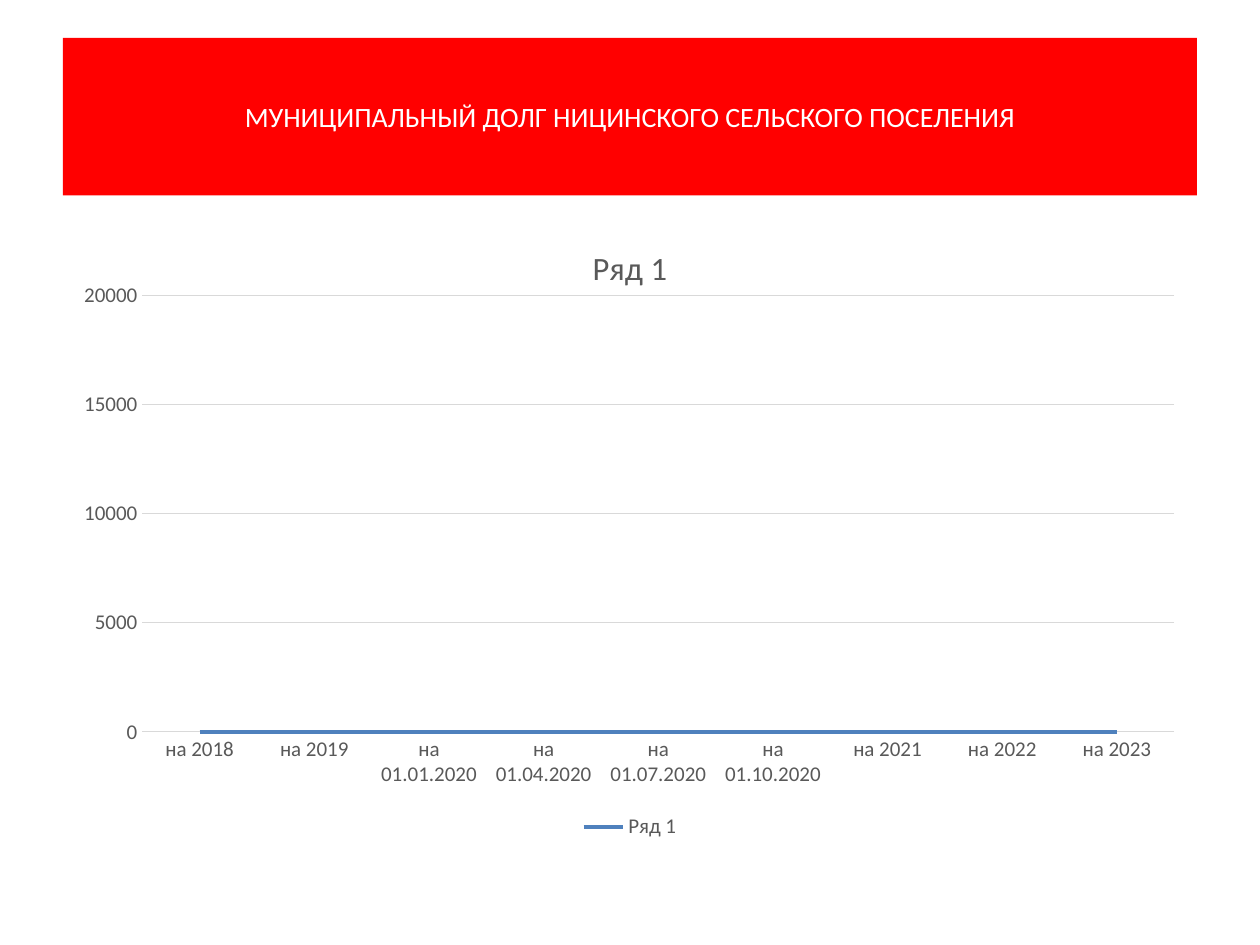
from dataclasses import dataclass

from lxml import etree
from pptx import Presentation
from pptx import util as u
from pptx.chart.data import CategoryChartData
from pptx.dml.color import RGBColor as Rgb
from pptx.enum import chart as ch, shapes, text
from pptx.oxml import parse_xml
from pptx.oxml.ns import nsdecls, qn


@dataclass(frozen=True)
class Theme:
    face: str = "Calibri"
    red: str = "FF0000"
    white: str = "FFFFFF"
    blue: str = "4F81BD"
    ink: str = "595959"
    grid: str = "D9D9D9"
    head: float = 16
    title: float = 18.6
    label: float = 12
    hair: float = 0.75
    stroke: float = 2.25


THEME = Theme()
SCALE = 9144  # EMU in one px, 100 px to the inch
NAME = "Ряд 1"
DATES = ["на 2018", "на 2019", "на 01.01.2020", "на 01.04.2020",
         "на 01.07.2020", "на 01.10.2020", "на 2021", "на 2022", "на 2023"]
DEBT = [0] * len(DATES)


def px(*vals):
    return [u.Emu(v * SCALE) for v in vals]


def style(font, size, color):
    font.name = THEME.face
    font.size = u.Pt(size)
    font.bold = False
    font.color.rgb = Rgb.from_string(color)


def stroke(line, color, width):
    line.color.rgb = Rgb.from_string(color)
    line.width = u.Pt(width)


def banner(slide, box, words):
    rect = slide.shapes.add_shape(shapes.MSO_SHAPE.RECTANGLE, *px(*box))
    rect.shadow.inherit = False
    rect.fill.solid()
    rect.fill.fore_color.rgb = Rgb.from_string(THEME.red)
    rect.line.fill.background()
    frame = rect.text_frame
    frame.word_wrap = True
    frame.vertical_anchor = text.MSO_ANCHOR.MIDDLE
    frame.text = words
    para = frame.paragraphs[0]
    para.alignment = text.PP_ALIGN.CENTER
    style(para.runs[0].font, THEME.head, THEME.white)


def fit(chart, **area):
    """Fix the inner plot area, in fractions of the chart."""
    plot = chart.element.find(".//" + qn("c:plotArea"))
    for old in plot.findall(qn("c:layout")):
        plot.remove(old)
    layout = parse_xml(f"<c:layout {nsdecls('c')}><c:manualLayout/></c:layout>")
    parts = {"layoutTarget": "inner", "xMode": "edge", "yMode": "edge", **area}
    for tag, val in parts.items():
        etree.SubElement(layout[0], qn("c:" + tag)).set("val", str(val))
    plot.insert(0, layout)


def graph(slide, box):
    data = CategoryChartData()
    data.categories = DATES
    data.add_series(NAME, DEBT)
    chart = slide.shapes.add_chart(
        ch.XL_CHART_TYPE.LINE, *px(*box), data).chart
    style(chart.font, THEME.label, THEME.ink)
    fit(chart, x=0.07, y=0.12, w=0.91, h=0.7)

    chart.has_title = True
    frame = chart.chart_title.text_frame
    frame.text = NAME
    style(frame.paragraphs[0].runs[0].font, THEME.title, THEME.ink)
    chart.has_legend = True
    chart.legend.position = ch.XL_LEGEND_POSITION.BOTTOM
    chart.legend.include_in_layout = False
    style(chart.legend.font, THEME.label, THEME.ink)

    cats, vals = chart.category_axis, chart.value_axis
    for axis in (cats, vals):
        axis.major_tick_mark = axis.minor_tick_mark = ch.XL_TICK_MARK.NONE
        style(axis.tick_labels.font, THEME.label, THEME.ink)
    stroke(cats.format.line, THEME.grid, THEME.hair)
    vals.format.line.fill.background()
    vals.minimum_scale, vals.maximum_scale, vals.major_unit = 0, 20000, 5000
    stroke(vals.major_gridlines.format.line, THEME.grid, THEME.hair)

    plot = chart.plots[0]
    plot.vary_by_categories = False
    debt = plot.series[0]
    debt.smooth = False
    debt.marker.style = ch.XL_MARKER_STYLE.NONE
    stroke(debt.format.line, THEME.blue, THEME.stroke)


def main():
    deck = Presentation()
    deck.slide_width, deck.slide_height = px(1000, 750)
    slide = deck.slides.add_slide(deck.slide_layouts[6])
    banner(slide, (50, 30, 900, 125),
           "МУНИЦИПАЛЬНЫЙ ДОЛГ НИЦИНСКОГО СЕЛЬСКОГО ПОСЕЛЕНИЯ")
    graph(slide, (50, 175, 900, 495))
    deck.save("out.pptx")


if __name__ == "__main__":
    main()
